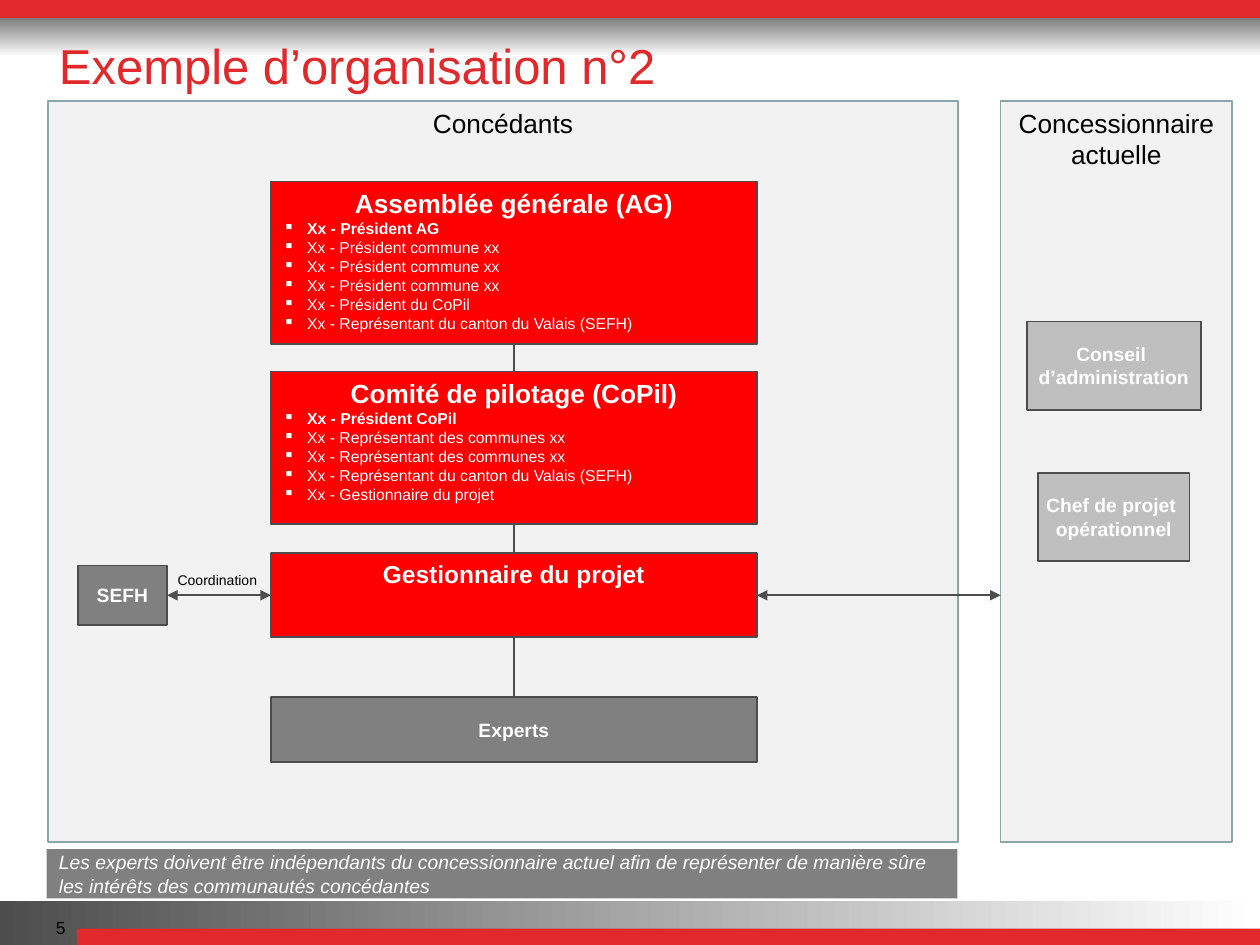
from dataclasses import dataclass

from lxml.etree import SubElement
from pptx import Presentation
from pptx.dml.color import RGBColor
from pptx.enum.shapes import MSO_CONNECTOR, MSO_SHAPE
from pptx.enum.text import MSO_ANCHOR, PP_ALIGN
from pptx.oxml.ns import qn
from pptx.shapes.autoshape import Shape
from pptx.shapes.connector import Connector
from pptx.slide import Slide
from pptx.util import Cm, Pt

COLOURS = {
    "brand": "E1282B", "red": "FF0000", "panel": "F2F2F2", "border": "8AA6A8",
    "grey": "808080", "light": "BFBFBF", "line": "4D4D4D", "shade": "5F5F5F",
    "black": "000000", "white": "FFFFFF",
}
COLUMN_LEFT, COLUMN_WIDTH = 5.46, 9.8
PANEL_TOP, PANEL_HEIGHT = 2.03, 14.94
ARROW_LEVEL = 12.0


@dataclass
class Line:
    text: str
    size: float
    colour: str = "white"
    bold: bool = False
    italic: bool = False
    bullet: bool = False
    align: PP_ALIGN = PP_ALIGN.CENTER


@dataclass
class Block:
    left: float
    top: float
    width: float
    height: float
    lines: tuple[Line, ...] = ()
    fill: str | None = None
    border: str | None = None
    anchor: MSO_ANCHOR = MSO_ANCHOR.TOP
    wrap: bool = False
    gradient_angle: int | None = None


def rgb(name: str) -> RGBColor:
    return RGBColor.from_string(COLOURS[name])


def write_lines(box: Shape, block: Block) -> None:
    frame = box.text_frame
    frame.word_wrap = block.wrap
    frame.vertical_anchor = block.anchor
    for index, line in enumerate(block.lines):
        para = frame.add_paragraph() if index else frame.paragraphs[0]
        para.alignment = line.align
        if line.bullet:
            properties = para._p.get_or_add_pPr()
            properties.set("marL", str(Cm(0.48)))
            properties.set("indent", str(Cm(-0.48)))
            SubElement(properties, qn("a:buChar"), char="▪")
        span = para.add_run()
        span.text = line.text
        span.font.name = "Arial"
        span.font.size = Pt(line.size)
        span.font.bold = line.bold
        span.font.italic = line.italic
        span.font.color.rgb = rgb(line.colour)


def draw_block(page: Slide, block: Block) -> Shape:
    place = [Cm(value) for value in (block.left, block.top, block.width, block.height)]
    if block.fill is None:
        box = page.shapes.add_textbox(*place)
    else:
        box = page.shapes.add_shape(MSO_SHAPE.RECTANGLE, *place)
        box.shadow.inherit = False
        if block.gradient_angle is None:
            box.fill.solid()
            box.fill.fore_color.rgb = rgb(block.fill)
        else:
            box.fill.gradient()
            box.fill.gradient_angle = block.gradient_angle
            for stop, name in zip(box.fill.gradient_stops, (block.fill, "white")):
                stop.color.rgb = rgb(name)
        if block.border:
            box.line.color.rgb = rgb(block.border)
            box.line.width = Pt(1)
        else:
            box.line.fill.background()
    write_lines(box, block)
    return box


def draw_link(page: Slide, start: tuple[float, float], end: tuple[float, float],
              arrows: bool = False) -> Connector:
    link = page.shapes.add_connector(
        MSO_CONNECTOR.STRAIGHT, *(Cm(value) for value in start + end))
    link.line.color.rgb = rgb("line")
    link.line.width = Pt(1)
    if arrows:
        outline = link.line._get_or_add_ln()
        for tag in ("a:headEnd", "a:tailEnd"):
            SubElement(outline, qn(tag), type="triangle")
    SubElement(link._element.spPr, qn("a:effectLst"))
    return link


def panel(left: float, width: float, title: str) -> Block:
    return Block(left, PANEL_TOP, width, PANEL_HEIGHT, (Line(title, 15, "black"),),
                 "panel", "border", wrap=True)


def unit(left: float, top: float, width: float, height: float, fill: str, *texts: str) -> Block:
    lines = tuple(Line(text, 11, bold=True) for text in texts)
    return Block(left, top, width, height, lines, fill, "line", MSO_ANCHOR.MIDDLE)


def committee(top: float, height: float, title: str, size: float, *members: str) -> Block:
    roster = tuple(Line(member, 9, bold=index == 0, bullet=True, align=PP_ALIGN.LEFT)
                   for index, member in enumerate(members))
    return Block(COLUMN_LEFT, top, COLUMN_WIDTH, height,
                 (Line(title, size, bold=True),) + roster, "red", "line")


def draw_frame(page: Slide) -> None:
    for block in (
        Block(0, 0.18, 25.4, 0.97, fill="shade", gradient_angle=270),
        Block(0, 0, 25.4, 0.36, fill="brand"),
        Block(0, 18.16, 25.4, 0.89, fill="line", gradient_angle=0),
        Block(1.55, 18.72, 23.85, 0.33, fill="brand"),
        Block(0.38, 18.36, 1.19, 0.69, (Line("5", 10, "black", align=PP_ALIGN.RIGHT),),
              wrap=True),
        Block(0.94, 0.58, 23.77, 1.45,
              (Line("Exemple d’organisation n°2", 28, "brand", align=PP_ALIGN.LEFT),),
              anchor=MSO_ANCHOR.MIDDLE, wrap=True),
    ):
        draw_block(page, block)


def draw_organisation(page: Slide) -> None:
    draw_block(page, panel(20.17, 4.67, "Concessionnaire actuelle"))
    draw_block(page, panel(0.97, 18.34, "Concédants"))
    sefh = draw_block(page, unit(1.57, 11.4, 1.8, 1.2, "grey", "SEFH"))
    draw_block(page, Block(3.33, 11.4, 2.13, 0.61,
                           (Line("Coordination", 8, "black", align=PP_ALIGN.LEFT),)))
    assembly = draw_block(page, committee(
        3.66, 3.28, "Assemblée générale (AG)", 15, "Xx - Président AG",
        *["Xx - Président commune xx"] * 3, "Xx - Président du CoPil",
        "Xx - Représentant du canton du Valais (SEFH)"))
    experts = draw_block(page, unit(COLUMN_LEFT, 14.05, COLUMN_WIDTH, 1.32, "grey", "Experts"))
    middle = COLUMN_LEFT + COLUMN_WIDTH / 2
    spine = draw_link(page, (middle, 6.94), (middle, 14.05))
    spine.begin_connect(assembly, 2)
    spine.end_connect(experts, 0)
    draw_block(page, committee(
        7.49, 3.07, "Comité de pilotage (CoPil)", 15, "Xx - Président CoPil",
        *["Xx - Représentant des communes xx"] * 2,
        "Xx - Représentant du canton du Valais (SEFH)", "Xx - Gestionnaire du projet"))
    manager = draw_block(page, committee(11.15, 1.7, "Gestionnaire du projet", 14))
    coordination = draw_link(page, (COLUMN_LEFT, ARROW_LEVEL), (3.37, ARROW_LEVEL), True)
    coordination.begin_connect(manager, 1)
    coordination.end_connect(sefh, 3)
    exchange = draw_link(page, (20.17, ARROW_LEVEL),
                         (COLUMN_LEFT + COLUMN_WIDTH, ARROW_LEVEL), True)
    exchange.end_connect(manager, 3)
    draw_block(page, unit(20.93, 9.53, 3.05, 1.78, "light", "Chef de projet ", "opérationnel"))
    draw_block(page, unit(20.7, 6.48, 3.51, 1.78, "light", "Conseil ", "d’administration"))
    note = ("Les experts doivent être indépendants du concessionnaire actuel afin de "
            "représenter de manière sûre les intérêts des communautés concédantes")
    draw_block(page, Block(0.94, 17.12, 18.36, 0.99,
                           (Line(note, 11, italic=True, align=PP_ALIGN.LEFT),),
                           "grey", anchor=MSO_ANCHOR.MIDDLE, wrap=True))


def main() -> None:
    """Build the project organisation slide."""
    deck = Presentation()
    deck.slide_width, deck.slide_height = Cm(25.4), Cm(19.05)
    page = deck.slides.add_slide(deck.slide_layouts[6])
    draw_frame(page)
    draw_organisation(page)
    deck.save("out.pptx")


if __name__ == "__main__":
    main()
